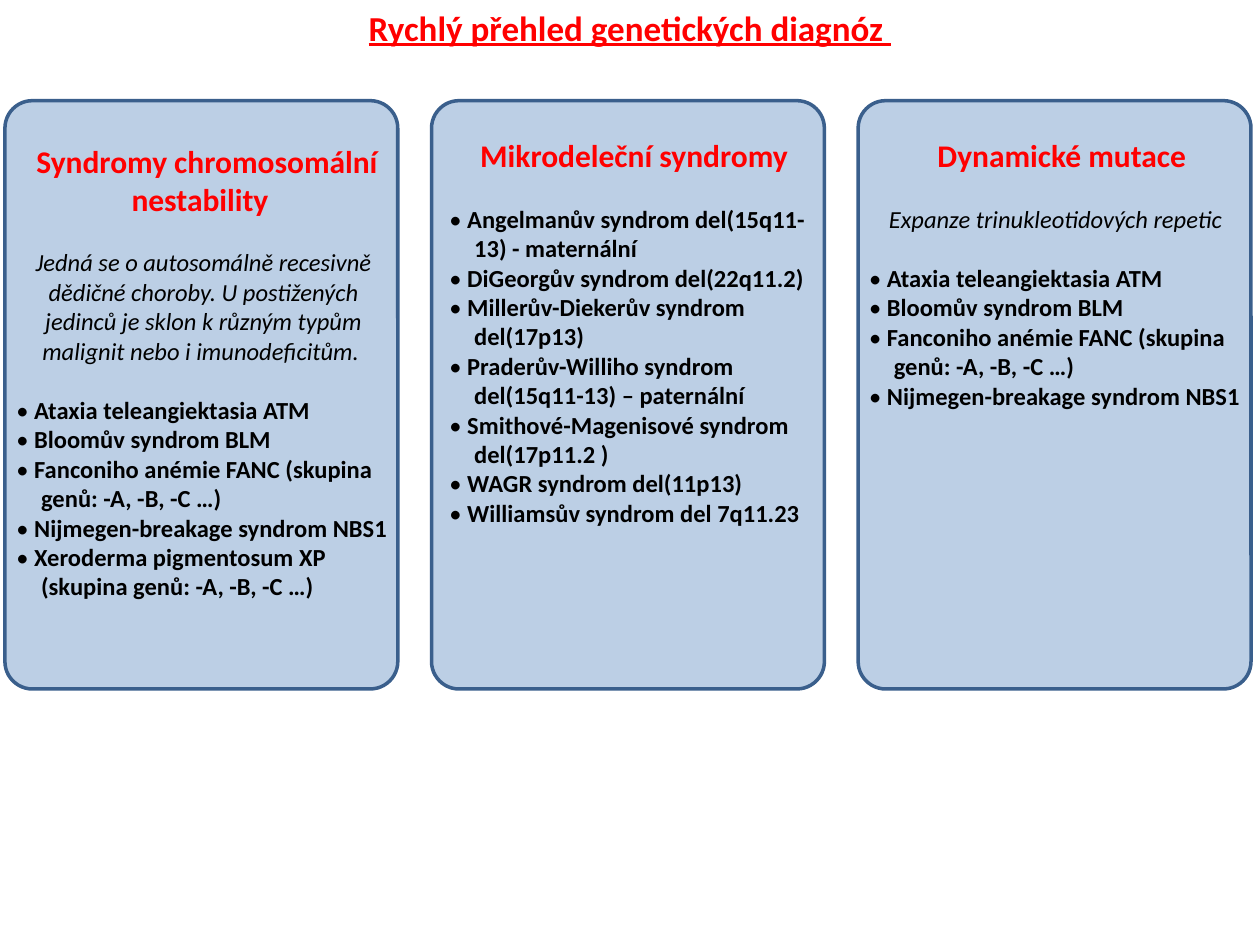
from lxml import etree
from pptx import Presentation
from pptx import util as u
from pptx.dml.color import RGBColor
from pptx.enum import shapes, text
from pptx.oxml.ns import qn

FONT = "Calibri"
RED, BLACK, BLUE, DARK_BLUE = "FF0000", "000000", "4F81BD", "3A5F8C"
CARD_LEFT, CARD_PITCH = 0.1, 8.6
SECTION_GAP = 17  # points, about one line of body text

SHARED_SYNDROMES = [
    "Ataxia teleangiektasia ATM",
    "Bloomův syndrom BLM",
    "Fanconiho anémie FANC (skupina genů: -A, -B, -C …)",
    "Nijmegen-breakage syndrom NBS1",
]

# Text box (left, top, width, height in cm), heading, description, syndromes
COLUMNS = [
    ((0.08, 2.74, 8.05, 9.58), " Syndromy chromosomální nestability ",
     "Jedná se o autosomálně recesivně dědičné choroby. U postižených "
     "jedinců je sklon k různým typům malignit nebo i imunodeficitům. ",
     SHARED_SYNDROMES
     + ["Xeroderma pigmentosum XP (skupina genů: -A, -B, -C …)"]),
    ((8.81, 2.62, 7.95, 8.2), " Mikrodeleční syndromy ", None,
     ["Angelmanův syndrom del(15q11-13) - maternální",
      "DiGeorgův syndrom del(22q11.2)",
      "Millerův-Diekerův syndrom del(17p13)",
      "Praderův-Williho syndrom del(15q11-13) – paternální",
      "Smithové-Magenisové syndrom del(17p11.2 )",
      "WAGR syndrom del(11p13)",
      "Williamsův syndrom del 7q11.23"]),
    ((17.27, 2.62, 8.13, 5.82), " Dynamické mutace",
     "Expanze trinukleotidových repetic ", SHARED_SYNDROMES),
]


def color(value):
    return RGBColor.from_string(value)


def add_card(page, left):
    card = page.shapes.add_shape(
        shapes.MSO_SHAPE.ROUNDED_RECTANGLE,
        u.Cm(left), u.Cm(2.03), u.Cm(7.92), u.Cm(11.86))
    card.adjustments[0] = 0.07
    card.shadow.inherit = False
    card.fill.solid()
    card.fill.fore_color.rgb = color(BLUE)
    # Fill opacity
    fill = card.fill._xPr.find(qn("a:solidFill"))
    etree.SubElement(fill[0], qn("a:alpha"), val="38000")
    card.line.color.rgb = color(DARK_BLUE)
    card.line.width = u.Pt(2)


def add_text_box(page, left, top, width, height):
    box = page.shapes.add_textbox(
        u.Cm(left), u.Cm(top), u.Cm(width), u.Cm(height))
    box.text_frame.word_wrap = True
    return box.text_frame


def format_span(span, size, tint=BLACK, bold=False, italic=False):
    font = span.font
    font.name, font.size = FONT, u.Pt(size)
    font.bold, font.italic = bold, italic
    font.color.rgb = color(tint)


def write_centered(para, content, size, **style):
    para.text = content
    para.alignment = text.PP_ALIGN.CENTER
    format_span(para.runs[0], size, **style)


def write_item(para, content):
    properties = para._p.get_or_add_pPr()
    properties.set("marL", str(u.Cm(0.5)))
    properties.set("indent", str(-u.Cm(0.5)))
    for part, bold in (("• ", False), (content, True)):
        span = para.add_run()
        span.text = part
        format_span(span, 14, bold=bold)


def add_column(page, bounds, heading, description, syndromes):
    frame = add_text_box(page, *bounds)
    write_centered(frame.paragraphs[0], heading, 18, tint=RED, bold=True)
    if description:
        para = frame.add_paragraph()
        para.space_before = u.Pt(SECTION_GAP)
        write_centered(para, description, 14, italic=True)
    for index, syndrome in enumerate(syndromes):
        para = frame.add_paragraph()
        if index == 0:
            para.space_before = u.Pt(SECTION_GAP)
        write_item(para, syndrome)


def main():
    deck = Presentation()
    deck.slide_width, deck.slide_height = u.Cm(25.4), u.Cm(19.05)
    page = deck.slides.add_slide(deck.slide_layouts[6])

    # Cards behind the text
    for index in range(len(COLUMNS)):
        add_card(page, CARD_LEFT + index * CARD_PITCH)

    # Title
    title = add_text_box(page, 0, 0, 25.4, 1.12).paragraphs[0]
    write_centered(title, "Rychlý přehled genetických diagnóz ", 20,
                   tint=RED, bold=True)
    title.runs[0].font.underline = True

    # Diagnosis columns
    for column in COLUMNS:
        add_column(page, *column)

    deck.save("out.pptx")


if __name__ == "__main__":
    main()
